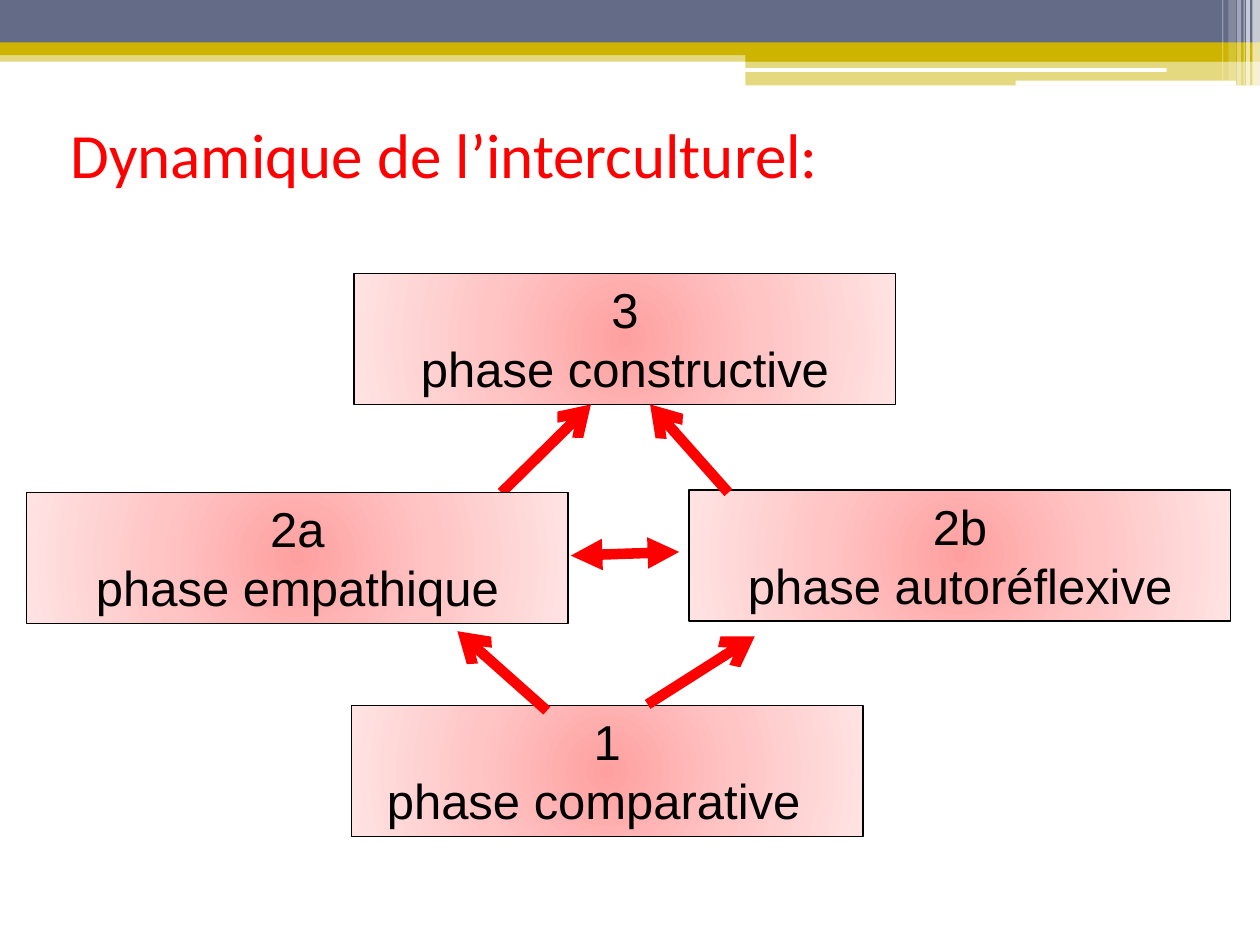
from typing import NamedTuple

from lxml import etree
from pptx import Presentation
from pptx import util as u
from pptx.dml import color
from pptx.enum import shapes, text
from pptx.oxml import ns

RED, GOLD, SLATE, WHITE, BLACK = "FF0000", "CCB400", "646B86", "FFFFFF", "000000"
GLOW = ((0, "FFA0A0"), (50, "FFC5C5"), (100, "FFE3E3"))
RECT = shapes.MSO_SHAPE.RECTANGLE
ROUND = shapes.MSO_SHAPE.ROUNDED_RECTANGLE
PHASE_HEIGHT = 74.9


class Band(NamedTuple):
    left: float
    top: float
    width: float
    height: float
    fill: str
    opacity: int = 100
    kind: shapes.MSO_SHAPE = RECT


class Phase(NamedTuple):
    number: str
    name: str
    left: float
    top: float
    width: float = 309.6
    name_shift: float = 0


class Arrow(NamedTuple):
    start: tuple[float, float]
    end: tuple[float, float]
    tail: str = "arrow"
    head: str = "none"


BANDS = (
    Band(0, 28.8, 720, 6.5, GOLD, 50),
    Band(0, 0, 720, 24.5, SLATE),
    Band(0, 24.3, 720, 7.2, GOLD),
    Band(426, 28.1, 294, 7.2, GOLD),
    Band(426, 34.6, 294, 14.2, GOLD, 50),
    Band(425.5, 38.9, 241.2, 2.2, WHITE, kind=ROUND),
    Band(580.3, 46.1, 126, 2.9, WHITE, kind=ROUND),
)
STRIPES = (
    Band(715.7, 0, 4.3, 49, WHITE, 65),
    Band(712.1, 0, 2.2, 49, WHITE, 65),
    Band(710.6, 0, 0.7, 49, WHITE, 60),
    Band(707, 0, 2.2, 49, WHITE, 40),
    Band(702, 0, 4.3, 46.1, WHITE, 20),
    Band(698.4, 0, 0.7, 46.1, WHITE, 30),
)
DIAGRAM = (
    Phase("1", "phase comparative", 200.9, 403.2, 292.3, 15.6),
    Phase("2b", "phase autoréflexive", 393.8, 280.1),
    Phase("3", "phase constructive", 202.3, 156.2),
    Arrow((370.1, 402.5), (431.3, 363.6)),
    Arrow((286.6, 281.5), (337.7, 231.1)),
    Phase("2a", "phase empathique", 15.1, 281.5),
    Arrow((312.5, 406.1), (261.4, 360.7)),
    Arrow((416.2, 281.5), (371.5, 231.1)),
    Arrow((388.1, 315.4), (326.2, 317.5), "triangle", "triangle"),
)


def rgb(code: str) -> color.RGBColor:
    """Turn a hex string into a colour."""
    return color.RGBColor.from_string(code)


def add_run(paragraph, words: str, size: float, font: str, ink: str) -> None:
    """Append one styled run to a paragraph."""
    run = paragraph.add_run()
    run.text = words
    run.font.size = u.Pt(size)
    run.font.name = font
    run.font.color.rgb = rgb(ink)


def draw_band(slide, band: Band) -> None:
    """Draw one plain piece of the header decoration."""
    shape = slide.shapes.add_shape(band.kind, *map(u.Pt, band[:4]))
    shape.shadow.inherit = False
    shape.line.fill.background()
    shape.fill.solid()
    shape.fill.fore_color.rgb = rgb(band.fill)
    if band.opacity < 100:
        tint = shape.fill._xPr.find(".//" + ns.qn("a:srgbClr"))
        etree.SubElement(tint, ns.qn("a:alpha"), val=str(band.opacity * 1000))


def fill_with_glow(shape) -> None:
    """Fill a shape with a circular gradient spreading from its centre."""
    shape.fill.gradient()
    gradient = shape.fill._xPr.find(ns.qn("a:gradFill"))
    for part in list(gradient):
        gradient.remove(part)
    stops = etree.SubElement(gradient, ns.qn("a:gsLst"))
    for position, code in GLOW:
        stop = etree.SubElement(stops, ns.qn("a:gs"), pos=str(position * 1000))
        etree.SubElement(stop, ns.qn("a:srgbClr"), val=code)
    circle = etree.SubElement(gradient, ns.qn("a:path"), {"path": "circle"})
    etree.SubElement(circle, ns.qn("a:fillToRect"), {side: "50000" for side in "ltrb"})


def draw_phase(slide, phase: Phase) -> None:
    """Draw a phase box, shifting its name left of centre when asked."""
    place = (phase.left, phase.top, phase.width, PHASE_HEIGHT)
    box = slide.shapes.add_shape(RECT, *map(u.Pt, place))
    box.shadow.inherit = False
    fill_with_glow(box)
    box.line.color.rgb = rgb(BLACK)
    box.line.width = u.Pt(0.75)
    frame = box.text_frame
    frame.word_wrap = True
    frame.auto_size = text.MSO_AUTO_SIZE.SHAPE_TO_FIT_TEXT
    frame.vertical_anchor = text.MSO_ANCHOR.TOP
    frame.margin_right = u.Pt(7.2 + phase.name_shift)
    number, name = frame.paragraphs[0], frame.add_paragraph()
    if phase.name_shift:
        number._p.get_or_add_pPr().set("marL", str(u.Pt(phase.name_shift)))
    for paragraph, words in ((number, phase.number), (name, phase.name)):
        paragraph.alignment = text.PP_ALIGN.CENTER
        add_run(paragraph, words, 28, "Arial", BLACK)


def draw_arrow(slide, arrow: Arrow) -> None:
    """Draw a thick red arrow between two points."""
    link = slide.shapes.add_connector(
        shapes.MSO_CONNECTOR.STRAIGHT, *map(u.Pt, arrow.start + arrow.end)
    )
    link.line.color.rgb = rgb(RED)
    link.line.width = u.Pt(6)
    outline = link.line._get_or_add_ln()
    etree.SubElement(outline, ns.qn("a:headEnd"), type=arrow.head)
    etree.SubElement(outline, ns.qn("a:tailEnd"), type=arrow.tail)
    etree.SubElement(link._element.spPr, ns.qn("a:effectLst"))


def draw_title(slide, words: str) -> None:
    """Write the slide title."""
    frame = slide.shapes.add_textbox(*map(u.Pt, (33.1, 45.4, 648, 84.2))).text_frame
    frame.word_wrap = True
    frame.vertical_anchor = text.MSO_ANCHOR.MIDDLE
    add_run(frame.paragraphs[0], words, 36, "Calibri", RED)


def main() -> None:
    """Build the slide and save it."""
    deck = Presentation()
    deck.slide_width, deck.slide_height = u.Pt(720), u.Pt(540)
    slide = deck.slides.add_slide(deck.slide_layouts[6])
    for band in BANDS + STRIPES:
        draw_band(slide, band)
    draw_title(slide, "Dynamique de l’interculturel:")
    for part in DIAGRAM:
        if isinstance(part, Phase):
            draw_phase(slide, part)
        else:
            draw_arrow(slide, part)
    deck.save("out.pptx")


if __name__ == "__main__":
    main()
